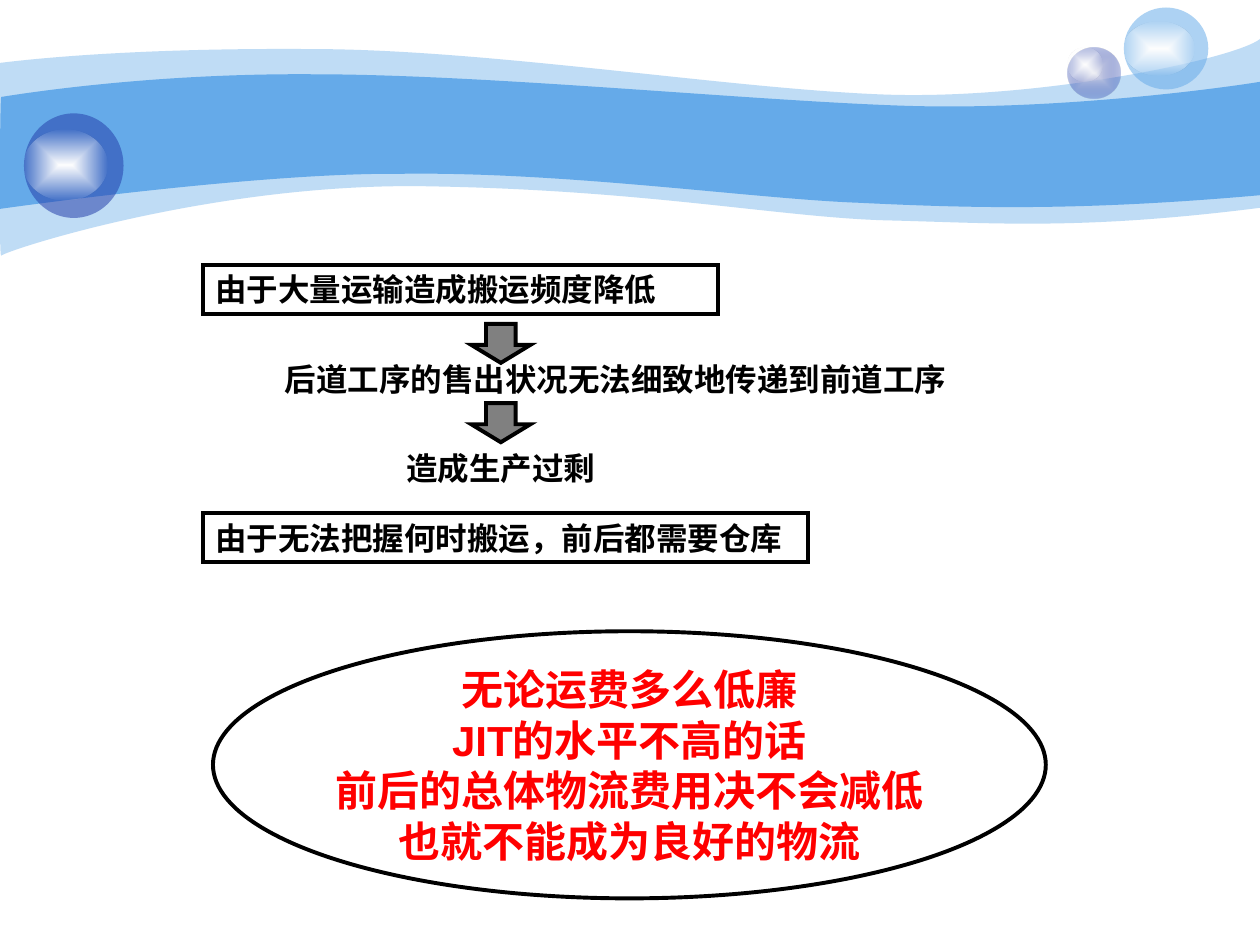
import pptx
import pptx.dml.color
import pptx.enum.shapes
import pptx.enum.text
import pptx.oxml.ns
import pptx.util
from lxml import etree

EMU_PER_PX = 9144  # 100 px to the inch
SHAPES = pptx.enum.shapes.MSO_SHAPE
ALIGN = pptx.enum.text.PP_ALIGN
qn = pptx.oxml.ns.qn

# Each band is a start point and its segments: one point draws a line, three a Bézier curve
OUTER_BAND = (0, 50), [
    [(24, 47), (107, 38), (247, 39)], [(386, 39), (575, 70), (699, 75)],
    [(822, 80), (980, 47), (1000, 31)], [(1000, 165)],
    [(858, 183), (788, 177), (705, 175)], [(622, 173), (515, 151), (343, 148)],
    [(172, 144), (4, 199), (1, 203)], [(-1, 208), (0, 75), (0, 50)],
]
INNER_BAND = (1, 77), [
    [(2, 77), (110, 58), (248, 59)], [(386, 59), (595, 80), (718, 84)],
    [(841, 88), (976, 69), (1000, 65)], [(1000, 155)],
    [(853, 168), (765, 165), (682, 161)], [(599, 158), (447, 136), (317, 138)],
    [(203, 137), (-2, 166), (-1, 166)], [(0, 166), (0, 77), (1, 77)],
]


def px(value):
    return pptx.util.Emu(value * EMU_PER_PX)


def rgb(color):
    return pptx.dml.color.RGBColor.from_string(color)


def set_alpha(color_parent, percent):
    color = color_parent.find(".//" + qn("a:srgbClr"))
    etree.SubElement(color, qn("a:alpha")).set("val", str(percent * 1000))


def style(shape, fill, alpha=100, line=None):
    shape.shadow.inherit = False
    shape.fill.solid()
    shape.fill.fore_color.rgb = rgb(fill)
    if alpha < 100:
        set_alpha(shape._element.spPr.find(qn("a:solidFill")), alpha)
    if line:
        shape.line.color.rgb = rgb(line)
        shape.line.width = pptx.util.Pt(2.25)
        outline = shape._element.spPr.find(qn("a:ln"))
        etree.SubElement(outline, qn("a:miter")).set("lim", "800000")
    else:
        shape.line.fill.background()


def add_preset(shapes, kind, box, fill, alpha=100, line=None):
    shape = shapes.add_shape(kind, *map(px, box))
    style(shape, fill, alpha, line)
    return shape


def glow(shape, inner, outer, outer_alpha):
    """Fill a shape with a gradient running out from its centre."""
    shape.fill.gradient()
    for stop, color in zip(shape.fill.gradient_stops, (inner, outer)):
        stop.color.rgb = rgb(color)
    gradient = shape._element.spPr.find(qn("a:gradFill"))
    set_alpha(gradient.findall(".//" + qn("a:gs"))[-1], outer_alpha)
    gradient.remove(gradient.find(qn("a:lin")))
    route = etree.SubElement(gradient, qn("a:path"))
    route.set("path", "shape")
    center = etree.SubElement(route, qn("a:fillToRect"))
    for side in "ltrb":
        center.set(side, "50000")


def add_band(shapes, band, alpha=100):
    start, segments = band
    builder = shapes.build_freeform(*start, scale=EMU_PER_PX)
    builder.add_line_segments(
        [point for segment in segments for point in segment], close=True)
    shape = builder.convert_to_shape()
    style(shape, "65AAE9", alpha)

    # Join the points of each curved segment into one Bézier element
    outline = shape._element.spPr.find(".//" + qn("a:path"))
    steps = iter(outline.findall(qn("a:lnTo")))
    for segment in segments:
        group = [next(steps) for _ in segment]
        if len(group) == 3:
            curve = etree.Element(qn("a:cubicBezTo"))
            group[0].addprevious(curve)
            for step in group:
                curve.append(step[0])
                outline.remove(step)


def add_bubble(shapes, ball, shine, color, ball_glow=None):
    group = shapes.add_group_shape()
    ball_shape = add_preset(group.shapes, SHAPES.OVAL, ball, color, 53)
    if ball_glow:
        glow(ball_shape, ball_glow, color, 31)
    shine_shape = add_preset(group.shapes, SHAPES.OVAL, shine, "FFFFFF")
    glow(shine_shape, "FFFFFF", "FFFFFF", 0)


def add_label(shapes, box, lines, kind=SHAPES.RECTANGLE, align=ALIGN.LEFT,
              size=18, color="000000", line=None):
    shape = add_preset(shapes, kind, box, "FFFFFF", line=line)
    frame = shape.text_frame
    frame.word_wrap = align == ALIGN.LEFT
    frame.vertical_anchor = pptx.enum.text.MSO_ANCHOR.MIDDLE
    for index, text in enumerate(lines):
        paragraph = frame.add_paragraph() if index else frame.paragraphs[0]
        paragraph.alignment = align
        run = paragraph.add_run()
        run.text = text
        run.font.name = "Arial"
        run.font.size = pptx.util.Pt(size)
        run.font.bold = True
        run.font.color.rgb = rgb(color)


def add_down_arrow(shapes, top):
    arrow = add_preset(shapes, SHAPES.DOWN_ARROW, (374, top, 47, 31),
                       "808080", line="000000")
    arrow.adjustments[0] = 0.5
    arrow.adjustments[1] = 0.46


def main():
    presentation = pptx.Presentation()
    presentation.slide_width = px(1000)
    presentation.slide_height = px(750)
    slide = presentation.slides.add_slide(presentation.slide_layouts[6])
    shapes = slide.shapes

    # Wave header with bubbles
    add_band(shapes, OUTER_BAND, 41)
    add_band(shapes, INNER_BAND)
    add_bubble(shapes, (847, 38, 42, 40), (847, 38, 28, 27), "233DA9", "E1E2ED")
    add_bubble(shapes, (892, 6, 67, 65), (892, 17, 56, 43), "65AAE9")
    add_bubble(shapes, (19, 90, 79, 83), (19, 103, 66, 56), "233DA9")

    # Chain of causes
    add_label(shapes, (161, 210, 409, 39), ["由于大量运输造成搬运频度降低"],
              line="000000")
    add_label(shapes, (216, 281, 591, 39),
              ["后道工序的售出状况无法细致地传递到前道工序"])
    add_label(shapes, (295, 352, 205, 39), ["造成生产过剩"], align=ALIGN.CENTER)
    add_label(shapes, (161, 407, 480, 39),
              ["由于无法把握何时搬运，前后都需要仓库"], line="000000")

    # Conclusion
    add_label(shapes, (169, 501, 661, 212),
              ["无论运费多么低廉", "JIT的水平不高的话",
               "前后的总体物流费用决不会减低", "也就不能成为良好的物流"],
              SHAPES.OVAL, ALIGN.CENTER, 24, "FF0000", "000000")

    # Arrows between the causes
    for top in (257, 320):
        add_down_arrow(shapes, top)

    presentation.save("out.pptx")


if __name__ == "__main__":
    main()
